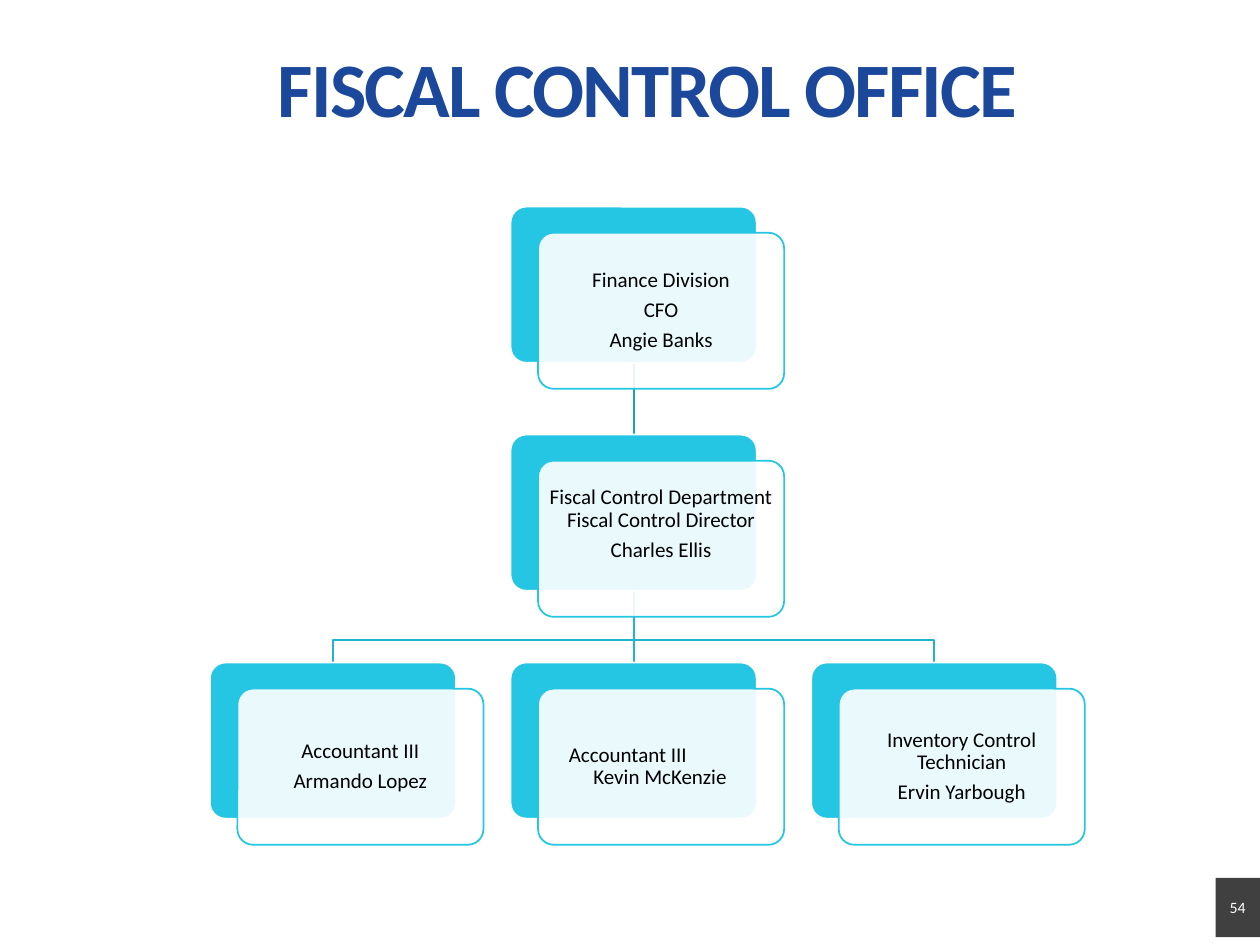
from dataclasses import dataclass

from lxml.etree import SubElement
from pptx import Presentation
from pptx.dml.color import RGBColor
from pptx.enum.shapes import MSO_CONNECTOR as Connector, MSO_SHAPE as Shape
from pptx.enum.text import MSO_ANCHOR as Anchor, PP_ALIGN as Align
from pptx.oxml.ns import qn
from pptx.util import Pt

WHITE = RGBColor(0xFF, 0xFF, 0xFF)
BLACK = RGBColor(0x00, 0x00, 0x00)
NAVY = RGBColor(0x1B, 0x48, 0x9B)
CYAN = RGBColor(0x25, 0xC6, 0xE3)
UPPER_LINK = RGBColor(0x1E, 0x9F, 0xB6)
LOWER_LINK = RGBColor(0x22, 0xB4, 0xCE)
CHARCOAL = RGBColor(0x40, 0x40, 0x40)

FONT = "Calibri"
CARD_WIDTH, CARD_HEIGHT = 140.6, 89.2
CHART_LEFT, CHART_TOP = 120, 118.1
COLUMN_STEP, ROW_STEP = 171.8, 130.25
PANEL_SHIFT_X, PANEL_SHIFT_Y = 15.7, 14.9
INSET = 3
ELBOW_DROP = 28.2


@dataclass(frozen=True)
class Position:
    column: int
    row: int
    lines: tuple[str, ...]
    bottom_inset: float = INSET
    hanging: bool = False

    @property
    def left(self) -> float:
        return CHART_LEFT + self.column * COLUMN_STEP

    @property
    def top(self) -> float:
        return CHART_TOP + self.row * ROW_STEP

    @property
    def center(self) -> float:
        return self.left + CARD_WIDTH / 2

    @property
    def bottom(self) -> float:
        return self.top + CARD_HEIGHT


CFO = Position(1, 0, ("Finance Division", "CFO", "Angie Banks"))
DIRECTOR = Position(
    1, 1,
    ("Fiscal Control Department Fiscal Control Director", "Charles Ellis"),
    bottom_inset=20,
)
STAFF = (
    Position(0, 2, ("Accountant III", "Armando Lopez")),
    Position(1, 2, ("Accountant III\vKevin McKenzie",), hanging=True),
    Position(2, 2, ("Inventory Control Technician", "Ervin Yarbough")),
)


def style_paragraph(paragraph, size: float, color: RGBColor, align=Align.CENTER) -> None:
    paragraph.alignment = align
    paragraph.font.name = FONT
    paragraph.font.size = Pt(size)
    paragraph.font.color.rgb = color


def set_insets(frame, side: float, top: float, bottom: float) -> None:
    frame.word_wrap = True
    frame.margin_left = frame.margin_right = Pt(side)
    frame.margin_top, frame.margin_bottom = Pt(top), Pt(bottom)


def add_box(slide, kind, left: float, top: float, width: float, height: float,
            fill: RGBColor, line: RGBColor | None = None):
    shape = slide.shapes.add_shape(kind, Pt(left), Pt(top), Pt(width), Pt(height))
    shape.shadow.inherit = False
    shape.fill.solid()
    shape.fill.fore_color.rgb = fill
    if line is None:
        shape.line.fill.background()
    else:
        shape.line.color.rgb = line
        shape.line.width = Pt(1)
    if kind == Shape.ROUNDED_RECTANGLE:
        shape.adjustments[0] = 0.1
    return shape


def add_card(slide, position: Position) -> None:
    add_box(slide, Shape.ROUNDED_RECTANGLE, position.left, position.top,
            CARD_WIDTH, CARD_HEIGHT, CYAN, WHITE)
    panel = add_box(slide, Shape.ROUNDED_RECTANGLE, position.left + PANEL_SHIFT_X,
                    position.top + PANEL_SHIFT_Y, CARD_WIDTH, CARD_HEIGHT, WHITE, CYAN)
    color = panel._element.spPr.find(qn("a:solidFill"))[0]
    SubElement(color, qn("a:alpha")).set("val", "90000")

    frame = panel.text_frame
    set_insets(frame, INSET, INSET, position.bottom_inset)
    frame.vertical_anchor = Anchor.MIDDLE
    frame.text = "\n".join(position.lines)
    for paragraph in frame.paragraphs:
        style_paragraph(paragraph, 12, BLACK, Align.LEFT if position.hanging else Align.CENTER)
        paragraph.line_spacing = 0.9
        paragraph.space_after = Pt(4.2)
        if position.hanging:
            properties = paragraph._p.get_or_add_pPr()
            properties.set("marL", str(Pt(26)))
            properties.set("indent", str(Pt(-14)))


def add_link(slide, upper: Position, lower: Position, color: RGBColor) -> None:
    start = (Pt(upper.center), Pt(upper.bottom))
    end = (Pt(lower.center), Pt(lower.top))
    if upper.column == lower.column:
        link = slide.shapes.add_connector(Connector.STRAIGHT, *start, *end)
        SubElement(link._element.spPr, qn("a:effectLst"))
    else:
        elbow = Pt(upper.bottom + ELBOW_DROP)
        builder = slide.shapes.build_freeform(*start)
        builder.add_line_segments([(start[0], elbow), (end[0], elbow), end], close=False)
        link = builder.convert_to_shape()
        link.shadow.inherit = False
        link.fill.background()
    link.line.color.rgb = color
    link.line.width = Pt(1)


def add_title(slide, text: str) -> None:
    title = slide.shapes.add_textbox(Pt(10), Pt(26), Pt(720), Pt(31))
    frame = title.text_frame
    set_insets(frame, 5, 3, 3)
    frame.text = text
    paragraph = frame.paragraphs[0]
    style_paragraph(paragraph, 44, NAVY)
    paragraph.font.bold = True
    paragraph.line_spacing = 0.9
    paragraph.runs[0].font._element.set("spc", "-110")


def add_page_number(slide, number: str) -> None:
    badge = add_box(slide, Shape.RECTANGLE, 694.6, 501.6, 25.4, 34, CHARCOAL)
    frame = badge.text_frame
    set_insets(frame, 0, 0, 0)
    frame.vertical_anchor = Anchor.MIDDLE
    frame.text = number
    style_paragraph(frame.paragraphs[0], 9, WHITE)


def main() -> None:
    presentation = Presentation()
    presentation.slide_width, presentation.slide_height = Pt(720), Pt(540)
    slide = presentation.slides.add_slide(presentation.slide_layouts[6])

    add_title(slide, "FISCAL CONTROL OFFICE")
    for member in reversed(STAFF):
        add_link(slide, DIRECTOR, member, LOWER_LINK)
    add_link(slide, CFO, DIRECTOR, UPPER_LINK)
    for position in (CFO, DIRECTOR, *STAFF):
        add_card(slide, position)
    add_page_number(slide, "54")

    presentation.save("out.pptx")


if __name__ == "__main__":
    main()
